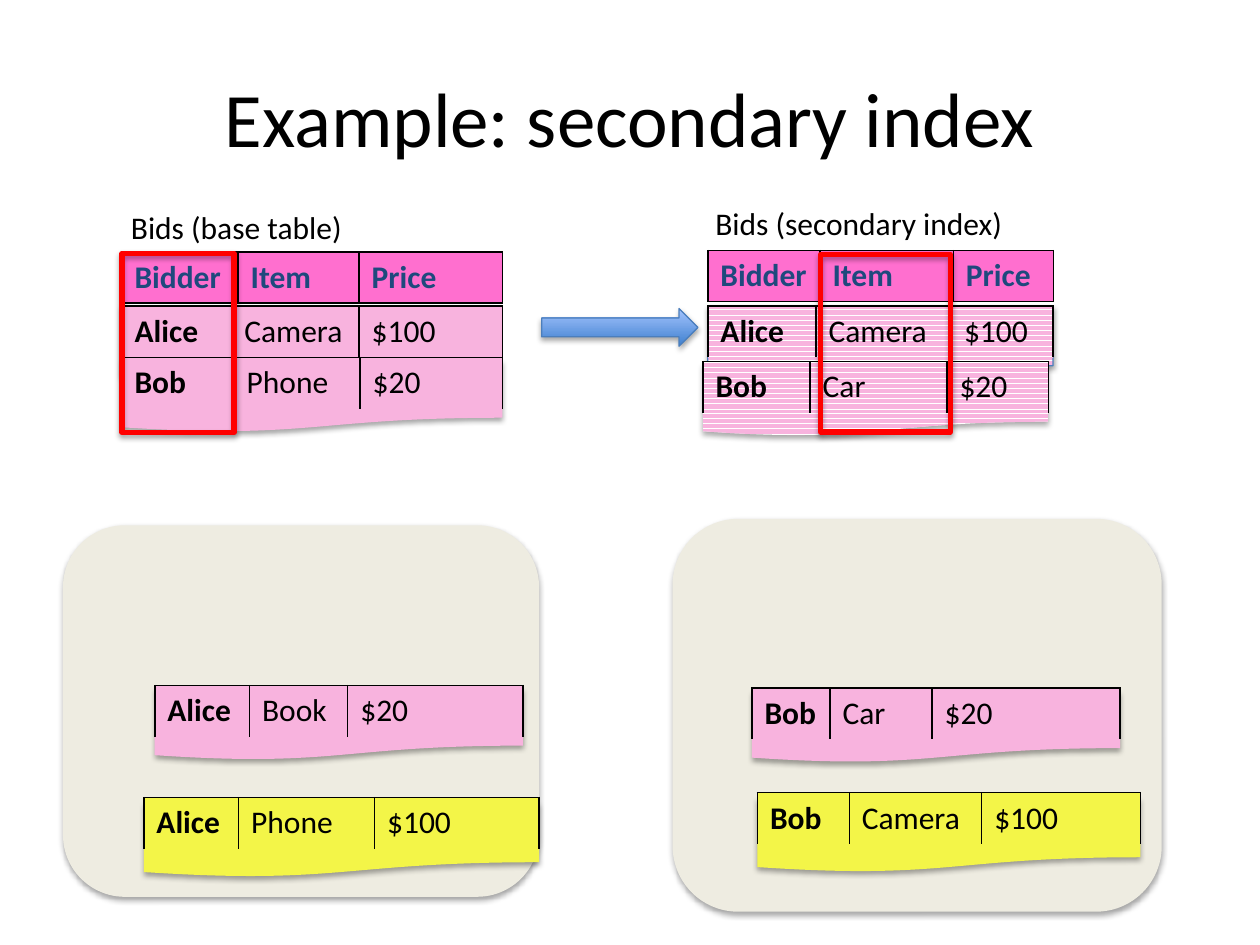
from dataclasses import dataclass
from typing import Optional

from lxml import etree
from pptx import Presentation
from pptx.dml.color import RGBColor
from pptx.enum.dml import MSO_PATTERN
from pptx.enum.shapes import MSO_SHAPE
from pptx.enum.text import MSO_ANCHOR, MSO_AUTO_SIZE, PP_ALIGN
from pptx.oxml import parse_xml
from pptx.oxml.ns import nsdecls, qn
from pptx.util import Cm, Pt

ROUNDED = MSO_SHAPE.ROUNDED_RECTANGLE
RECTANGLE = MSO_SHAPE.RECTANGLE
DOCUMENT = MSO_SHAPE.FLOWCHART_DOCUMENT
ARROW = MSO_SHAPE.RIGHT_ARROW
STRIPES = MSO_PATTERN.DARK_HORIZONTAL

FONT = "Calibri"
BLACK, WHITE, NAVY, RED = "000000", "FFFFFF", "1F497D", "FF0000"
PINK, MAGENTA, YELLOW, BEIGE, BLUE = "F8B3DE", "FF6FCF", "F3F548", "EEECE1", "4B7EBC"
ROW_HEIGHT = 1.03
SHEET_HEIGHT = 1.45


@dataclass
class Box:
    left: float
    top: float
    width: float
    height: float

    def lengths(self) -> tuple:
        return Cm(self.left), Cm(self.top), Cm(self.width), Cm(self.height)


@dataclass
class Record:
    left: float
    top: float
    widths: tuple
    values: tuple
    color: str = PINK
    striped: bool = False
    header: bool = False


@dataclass
class Card:
    record: Record
    sheet_top: float
    sheet_height: float = SHEET_HEIGHT


@dataclass
class BidsTable:
    label: str
    label_box: Box
    sheets: tuple
    records: tuple
    striped: bool
    key_frame: Box


def rgb(color: str) -> RGBColor:
    return RGBColor.from_string(color)


def paint(fill, color: str, striped: bool = False) -> None:
    if striped:
        fill.patterned()
        fill.pattern = STRIPES
        fill.fore_color.rgb = rgb(color)
        fill.back_color.rgb = rgb(WHITE)
    else:
        fill.solid()
        fill.fore_color.rgb = rgb(color)


def write(frame, text: str, *, size: float = 18, color: str = BLACK,
          bold: bool = False, align=PP_ALIGN.LEFT) -> None:
    para = frame.paragraphs[0]
    para.alignment = align
    span = para.add_run()
    span.text = text
    span.font.name = FONT
    span.font.size = Pt(size)
    span.font.bold = bold
    span.font.color.rgb = rgb(color)


def add_shadow(shape) -> None:
    shape.shadow.inherit = False
    effects = shape._element.spPr.find(qn("a:effectLst"))
    shadow = etree.SubElement(effects, qn("a:outerShdw"), blurRad="40000",
                              dist="23000", dir="5400000", rotWithShape="0")
    tint = etree.SubElement(shadow, qn("a:srgbClr"), val=BLACK)
    etree.SubElement(tint, qn("a:alpha"), val="35000")


def add_shape(page, kind, box: Box, *, fill: Optional[str] = None,
              striped: bool = False, line: Optional[str] = None,
              line_width: float = 0.75):
    shape = page.shapes.add_shape(kind, *box.lengths())
    add_shadow(shape)
    if fill:
        paint(shape.fill, fill, striped)
    else:
        shape.fill.background()
    if line:
        shape.line.color.rgb = rgb(line)
        shape.line.width = Pt(line_width)
    else:
        shape.line.fill.background()
    return shape


def set_borders(cell, closed: bool) -> None:
    """Border the left, right and top, and the bottom only if closed."""
    properties = cell._tc.get_or_add_tcPr()
    for index, side in enumerate("LRTB"):
        if side != "B" or closed:
            paint_xml = f'<a:solidFill><a:srgbClr val="{BLACK}"/></a:solidFill>'
        else:
            paint_xml = "<a:noFill/>"
        properties.insert(index, parse_xml(
            f'<a:ln{side} {nsdecls("a")} w="12700">{paint_xml}</a:ln{side}>'))


def add_record(page, record: Record) -> None:
    box = Box(record.left, record.top, sum(record.widths), ROW_HEIGHT)
    table = page.shapes.add_table(1, len(record.values), *box.lengths()).table
    table.first_row = table.horz_banding = False
    for index, (width, value) in enumerate(zip(record.widths, record.values)):
        table.columns[index].width = Cm(width)
        cell = table.cell(0, index)
        paint(cell.fill, MAGENTA if record.header else record.color, record.striped)
        set_borders(cell, closed=record.header)
        write(cell.text_frame, value, color=NAVY if record.header else BLACK,
              bold=record.header or index == 0)


def add_card(page, card: Card) -> None:
    record = card.record
    sheet = Box(record.left, card.sheet_top, sum(record.widths), card.sheet_height)
    add_shape(page, DOCUMENT, sheet, fill=record.color)
    add_record(page, record)


def add_bids_table(page, bids: BidsTable) -> None:
    for box, line in zip(bids.sheets, (None, BLUE)):
        add_shape(page, DOCUMENT, box, fill=PINK, striped=bids.striped, line=line)
    label = page.shapes.add_textbox(*bids.label_box.lengths())
    label.text_frame.word_wrap = False
    label.text_frame.auto_size = MSO_AUTO_SIZE.SHAPE_TO_FIT_TEXT
    write(label.text_frame, bids.label)
    for record in bids.records:
        add_record(page, record)


HEADINGS = ("Bidder", "Item", "Price")
PANELS = (Box(13.56, 10.46, 9.86, 7.92), Box(1.27, 10.59, 9.6, 7.49))
CARDS = (
    Card(Record(15.16, 13.87, (1.57, 2.06, 3.79), ("Bob", "Car", "$20")), 13.92),
    Card(Record(3.12, 13.82, (1.91, 1.98, 3.53), ("Alice", "Book", "$20")), 13.87),
    Card(Record(15.27, 15.98, (1.85, 2.67, 3.2), ("Bob", "Camera", "$100"), YELLOW),
         16.08, 1.5),
    Card(Record(2.9, 16.08, (1.91, 2.74, 3.32), ("Alice", "Phone", "$100"), YELLOW),
         16.18, 1.5),
)
BASE = BidsTable(
    "Bids (base table)", Box(2.39, 4.06, 4.83, 1.02),
    (Box(2.46, 7.26, 7.67, SHEET_HEIGHT), Box(2.46, 6.17, 7.42, 1.47)),
    (Record(2.46, 5.08, (2.34, 2.44, 2.89), HEADINGS, header=True),
     Record(2.46, 6.17, (2.21, 2.57, 2.89), ("Alice", "Camera", "$100")),
     Record(2.46, 7.21, (2.26, 2.54, 2.87), ("Bob", "Phone", "$20"))),
    False, Box(2.46, 5.11, 2.26, 3.61))
SECONDARY = BidsTable(
    "Bids (secondary index)", Box(14.17, 3.99, 6.38, 1.02),
    (Box(14.17, 7.34, 6.96, SHEET_HEIGHT), Box(14.27, 6.17, 6.96, 1.5)),
    (Record(14.27, 5.05, (2.26, 2.69, 2.02), HEADINGS, header=True),
     Record(14.27, 6.17, (2.18, 2.73, 2.05), ("Alice", "Camera", "$100"), striped=True),
     Record(14.17, 7.29, (2.16, 2.76, 2.05), ("Bob", "Car", "$20"), striped=True)),
    True, Box(16.54, 5.13, 2.62, 3.58))


def main() -> None:
    deck = Presentation()
    deck.slide_width, deck.slide_height = Cm(25.4), Cm(19.05)
    page = deck.slides.add_slide(deck.slide_layouts[5])

    # Title
    title = page.shapes.title
    title.left, title.top, title.width, title.height = Box(1.27, 0.76, 22.86, 3.18).lengths()
    title.text_frame.vertical_anchor = MSO_ANCHOR.MIDDLE
    write(title.text_frame, "Example: secondary index", size=44, align=PP_ALIGN.CENTER)

    # Storage panels with their records
    for panel in PANELS:
        add_shape(page, ROUNDED, panel, fill=BEIGE)
    for card in CARDS:
        add_card(page, card)

    # Arrow from base table to index
    arrow = add_shape(page, ARROW, Box(10.92, 6.22, 3.15, 0.76), line=BLUE)
    arrow.fill.gradient()
    arrow.fill.gradient_angle = 90
    for stop, color in zip(arrow.fill.gradient_stops, ("3F80CE", "A4C4FF")):
        stop.color.rgb = rgb(color)

    # Bids tables, then the frames around their key columns
    for bids in (BASE, SECONDARY):
        add_bids_table(page, bids)
    for bids in (BASE, SECONDARY):
        add_shape(page, RECTANGLE, bids.key_frame, line=RED, line_width=3)

    deck.save("out.pptx")


if __name__ == "__main__":
    main()
